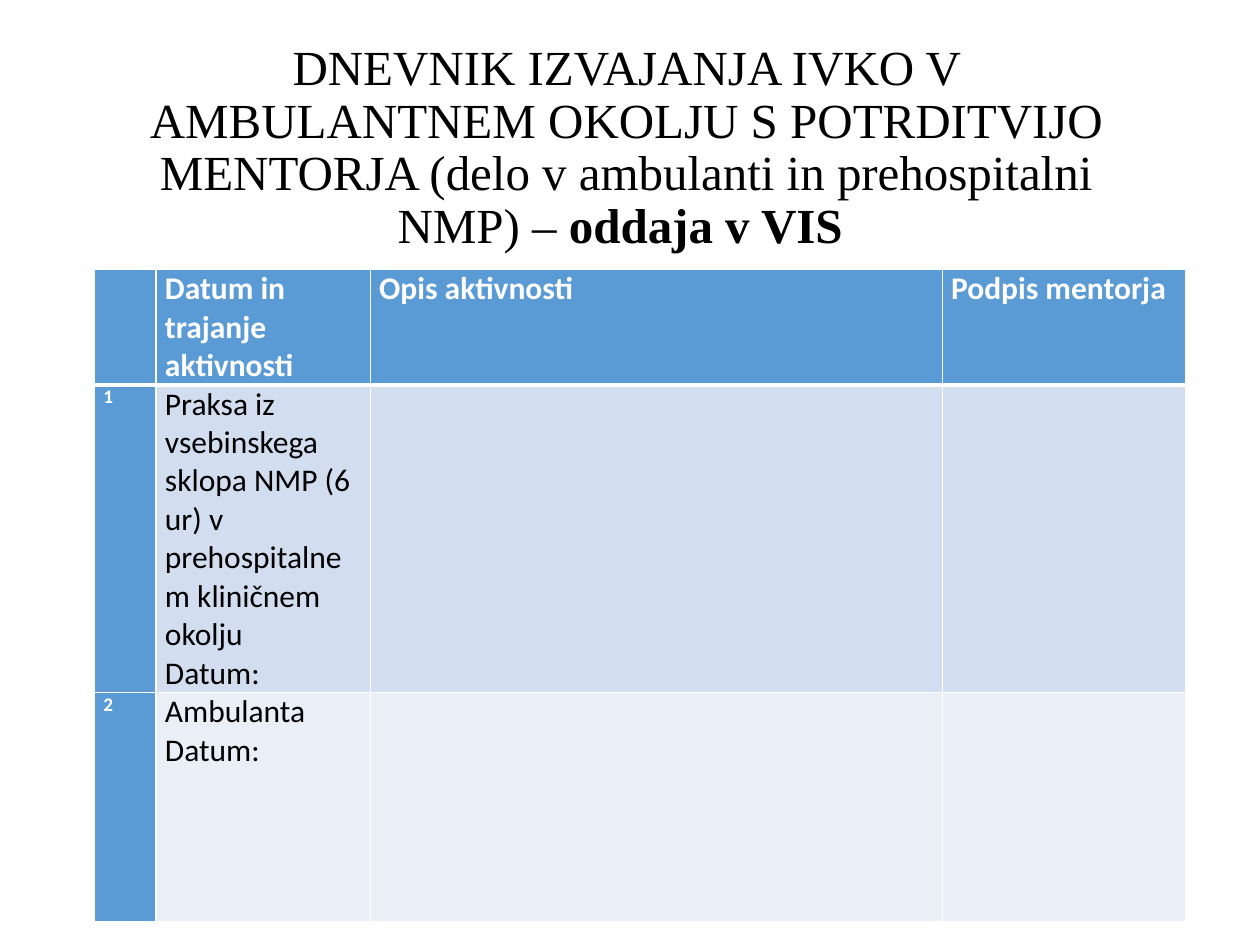
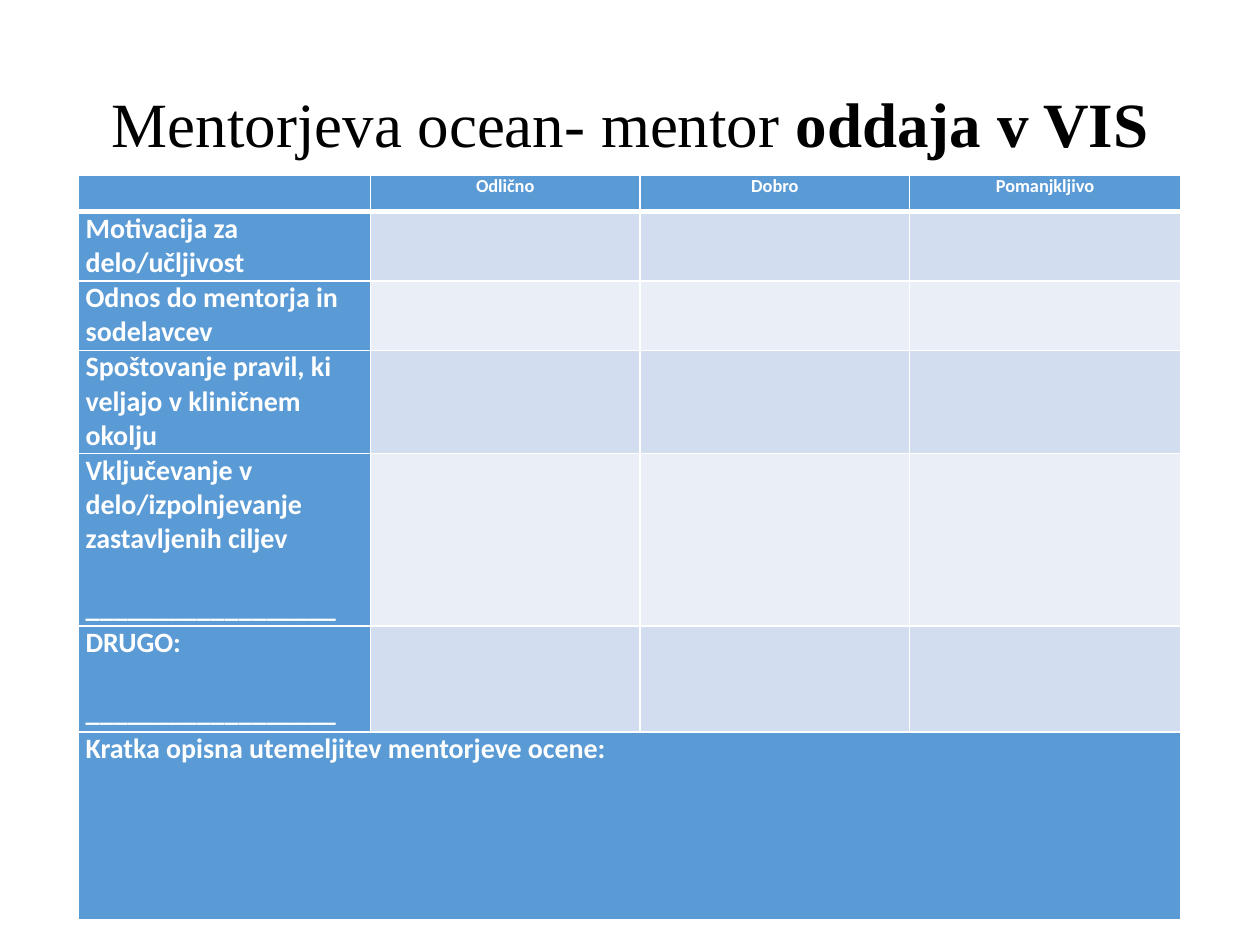
from lxml import etree
from pptx import Presentation
from pptx.dml.color import RGBColor
from pptx.enum import text
from pptx.oxml.ns import qn
from pptx.util import Inches, Pt

COLORS = {
    "ink": "000000",
    "white": "FFFFFF",
    "header": "5B9BD5",
    "odd": "D2DEEF",
    "even": "EAEFF7",
}
TITLE_FONT = "Times New Roman"
BODY_FONT = "Calibri"
BLANK_LINE = "__________________"


def add_run(p, words, font, size, color, bold):
    r = p.add_run()
    r.text = words
    r.font.name = font
    r.font.size = Pt(size)
    r.font.bold = bold
    r.font.color.rgb = RGBColor.from_string(COLORS[color])


def add_border(cell, side, width):
    ln = etree.SubElement(cell._tc.get_or_add_tcPr(), qn(f"a:{side}"), w=str(Pt(width)))
    fill = etree.SubElement(ln, qn("a:solidFill"))
    etree.SubElement(fill, qn("a:srgbClr"), val=COLORS["white"])


pages = [
    {
        "title": [
            ("DNEVNIK IZVAJANJA IVKO V AMBULANTNEM OKOLJU S POTRDITVIJO MENTORJA "
             "(delo v ambulanti in prehospitalni NMP) – ", False),
            ("oddaja v VIS ", True),
        ],
        "title_box": (0.69, -0.19, 8.56, 2.28),
        "title_size": 28,
        "title_top_inset": 0.51,
        "table_at": (0.75, 2.14),
        "cols": [0.49, 1.7, 4.54, 1.93],
        "rows": [0.91, 2.44, 1.82],
        "inset": 0.07,
        "head_size": 18,
        "head_align": text.PP_ALIGN.LEFT,
        "label_size": 11,
        "cells": [
            ["", "Datum in trajanje aktivnosti", "Opis aktivnosti", "Podpis mentorja"],
            ["1", "Praksa iz vsebinskega sklopa NMP (6 ur) v prehospitalnem "
                  "kliničnem okolju\nDatum:", "", ""],
            ["2", "Ambulanta\nDatum:", "", ""],
        ],
        "merge_last": False,
    },
    {
        "title": [("Mentorjeva ocean- mentor ", False), ("oddaja v VIS", True)],
        "title_box": (0.69, 0.4, 8.62, 1.22),
        "title_size": 36,
        "title_top_inset": 0.05,
        "table_at": (0.62, 1.39),
        "cols": [2.32, 2.14, 2.14, 2.15],
        "rows": [0.29, 0.55, 0.55, 0.82, 1.37, 0.84, 1.49],
        "inset": 0.06,
        "head_size": 10.5,
        "head_align": text.PP_ALIGN.CENTER,
        "label_size": 16,
        "cells": [
            ["", "Odlično", "Dobro", "Pomanjkljivo"],
            ["Motivacija za delo/učljivost", "", "", ""],
            ["Odnos do mentorja in sodelavcev", "", "", ""],
            ["Spoštovanje pravil, ki veljajo v kliničnem okolju", "", "", ""],
            ["Vključevanje v delo/izpolnjevanje zastavljenih ciljev\n" + BLANK_LINE, "", "", ""],
            ["DRUGO:\n" + BLANK_LINE, "", "", ""],
            ["Kratka opisna utemeljitev mentorjeve ocene:", "", "", ""],
        ],
        "merge_last": True,
    },
]

prs = Presentation()
prs.slide_width = Inches(10)
prs.slide_height = Inches(7.5)

for page in pages:
    s = prs.slides.add_slide(prs.slide_layouts[5])
    title = s.shapes.title
    title.left, title.top, title.width, title.height = map(Inches, page["title_box"])
    tf = title.text_frame
    tf.word_wrap = True
    tf.auto_size = text.MSO_AUTO_SIZE.NONE
    tf.vertical_anchor = text.MSO_ANCHOR.MIDDLE
    tf.margin_top = Inches(page["title_top_inset"])
    p = tf.paragraphs[0]
    p.alignment = text.PP_ALIGN.CENTER
    p.line_spacing = 0.9
    for words, bold in page["title"]:
        add_run(p, words, TITLE_FONT, page["title_size"], "ink", bold)

    cols, rows = page["cols"], page["rows"]
    left, top = map(Inches, page["table_at"])
    table = s.shapes.add_table(len(rows), len(cols), left, top,
                               Inches(sum(cols)), Inches(sum(rows))).table
    table.first_col = True
    table.horz_banding = False
    for col, width in zip(table.columns, cols):
        col.width = Inches(width)
    for row, height in zip(table.rows, rows):
        row.height = Inches(height)

    for i, row_words in enumerate(page["cells"]):
        for j, words in enumerate(row_words):
            cell = table.cell(i, j)
            is_head = i == 0 or j == 0
            cell.margin_left = cell.margin_right = Inches(page["inset"])
            cell.margin_top = cell.margin_bottom = 0
            for side in ("lnL", "lnR", "lnT", "lnB"):
                thick = (i, side) in ((0, "lnB"), (1, "lnT"))
                add_border(cell, side, 3 if thick else 1)
            fill = "header" if is_head else "odd" if i % 2 else "even"
            cell.fill.solid()
            cell.fill.fore_color.rgb = RGBColor.from_string(COLORS[fill])

            tf = cell.text_frame
            if not words:
                etree.SubElement(tf.paragraphs[0]._p, qn("a:endParaRPr"), sz="1000")
                continue
            size = page["head_size"] if i == 0 else page["label_size"] if j == 0 else 18
            for n, line in enumerate(words.split("\n")):
                p = tf.add_paragraph() if n else tf.paragraphs[0]
                p.alignment = page["head_align"] if i == 0 else text.PP_ALIGN.LEFT
                if line == BLANK_LINE:
                    p.space_before = Pt(19.5)
                add_run(p, line, BODY_FONT, size, "white" if is_head else "ink", is_head)

    if page["merge_last"]:
        last = len(rows) - 1
        table.cell(last, 0).merge(table.cell(last, len(cols) - 1))

prs.save("out.pptx")
